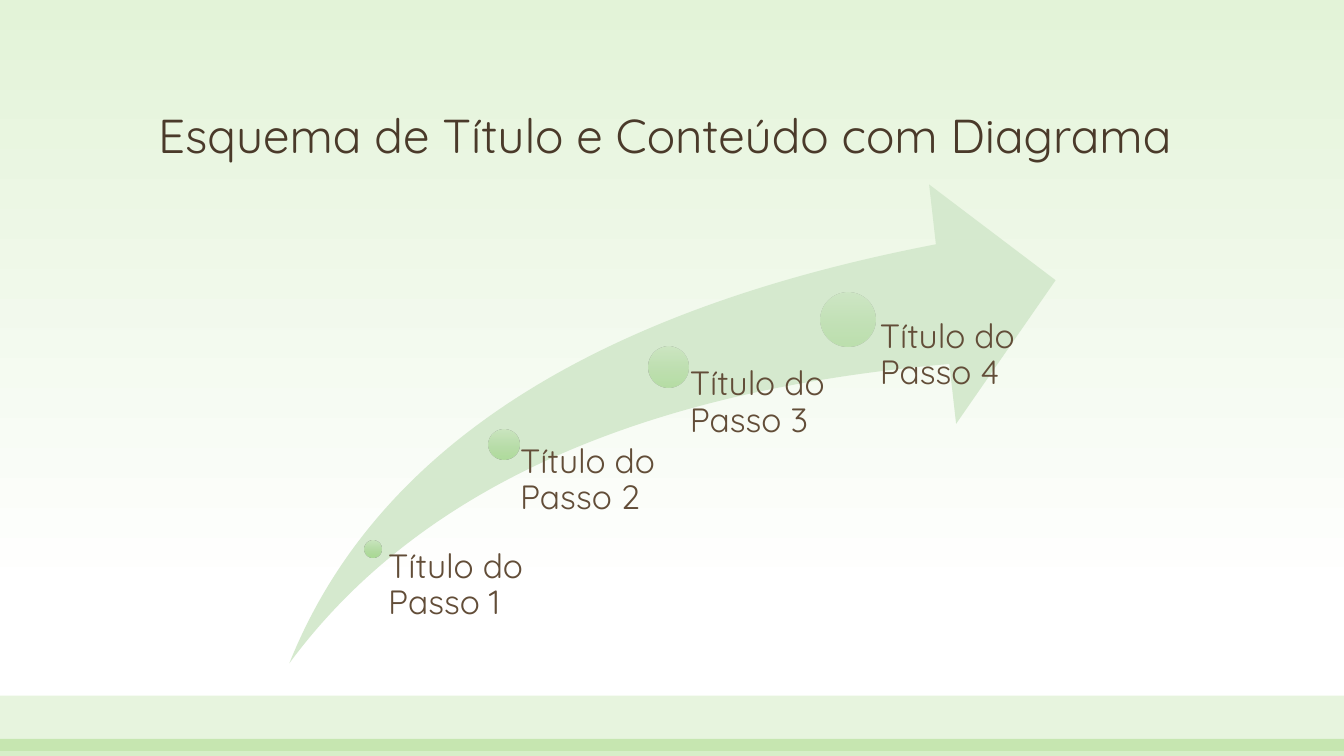
from typing import NamedTuple

from lxml.etree import SubElement
from pptx import Presentation
from pptx.dml.color import RGBColor
from pptx.enum.shapes import MSO_SHAPE as Shape
from pptx.enum.text import MSO_ANCHOR as Anchor
from pptx.oxml.ns import qn
from pptx.util import Inches, Pt

FONT = "Quicksand"
TITLE_BROWN = RGBColor(0x4A, 0x3A, 0x2A)
TEXT_BROWN = RGBColor(0x62, 0x4D, 0x38)
BAND_GREEN = RGBColor(0x72, 0xC2, 0x3C)
ARROW_GREEN = RGBColor(0xD5, 0xE9, 0xCE)
SKY_GREEN = RGBColor(0xE3, 0xF3, 0xD8)
WHITE = RGBColor(0xFF, 0xFF, 0xFF)
DOT_LIGHT = RGBColor(0xC8, 0xE5, 0xBC)
DOT_MID = RGBColor(0xB3, 0xDB, 0xA2)
DOT_DARK = RGBColor(0xA4, 0xD7, 0x8D)

ARROW_BOTTOM = 6.58


class Band(NamedTuple):
    top: float
    height: float
    opacity: float


class Step(NamedTuple):
    cx: float
    cy: float
    diameter: float
    text_left: float
    text_width: float


BANDS = [Band(6.9, 0.55, 17), Band(7.33, 0.17, 28)]
STEPS = [
    Step(3.7, 5.45, 0.17, 3.76, 1.46),
    Step(5.0, 4.41, 0.3, 5.0, 1.6),
    Step(6.63, 3.64, 0.4, 6.63, 1.6),
    Step(8.41, 3.17, 0.54, 8.44, 1.81),
]


def set_opacity(color, percent: float) -> None:
    SubElement(color, qn("a:alpha"), val=str(round(percent * 1000)))


def set_gradient(fill, element, stops: list, opacity: float = 100) -> None:
    """Fill from top to bottom with (percent, colour) stops."""
    fill.gradient()
    fill.gradient_angle = 270
    stop_list = next(element.iter(qn("a:gsLst")))
    for old in list(stop_list):
        stop_list.remove(old)
    for position, rgb in stops:
        stop = SubElement(stop_list, qn("a:gs"), pos=str(position * 1000))
        color = SubElement(stop, qn("a:srgbClr"), val=str(rgb))
        if opacity < 100:
            set_opacity(color, opacity)


def add_plain_shape(slide, kind: Shape, left: float, top: float,
                    width: float, height: float, rgb: RGBColor | None = None):
    sp = slide.shapes.add_shape(kind, Inches(left), Inches(top),
                                Inches(width), Inches(height))
    sp.shadow.inherit = False
    sp.line.fill.background()
    if rgb is not None:
        sp.fill.solid()
        sp.fill.fore_color.rgb = rgb
    return sp


def add_text(slide, text: str, left: float, top: float, width: float,
             height: float, *, size: float, color: RGBColor,
             anchor: Anchor = Anchor.TOP,
             insets: tuple = (0.1, 0.05, 0.1, 0.05)) -> None:
    box = slide.shapes.add_textbox(Inches(left), Inches(top),
                                   Inches(width), Inches(height))
    tf = box.text_frame
    tf.word_wrap = True
    tf.vertical_anchor = anchor
    (tf.margin_left, tf.margin_top,
     tf.margin_right, tf.margin_bottom) = map(Inches, insets)
    p = tf.paragraphs[0]
    p.line_spacing = 0.9
    r = p.add_run()
    r.text = text
    r.font.name = FONT
    r.font.size = Pt(size)
    r.font.color.rgb = color


def add_band(slide, band: Band) -> None:
    sp = add_plain_shape(slide, Shape.RECTANGLE, 0, band.top, 13.33,
                         band.height, BAND_GREEN)
    set_opacity(next(sp.element.spPr.iter(qn("a:srgbClr"))), band.opacity)


def add_step(slide, step: Step, index: int) -> None:
    d = step.diameter
    dot = add_plain_shape(slide, Shape.OVAL, step.cx - d / 2,
                          step.cy - d / 2, d, d)
    set_gradient(dot.fill, dot.element.spPr,
                 [(0, DOT_LIGHT), (50, DOT_MID), (100, DOT_DARK)],
                 opacity=90 - 40 * index / (len(STEPS) - 1))
    add_text(slide, f"Título do Passo {index + 1}", step.text_left, step.cy,
             step.text_width, ARROW_BOTTOM - step.cy, size=24,
             color=TEXT_BROWN, insets=(0.53 * d, 0, 0, 0))


def main() -> None:
    prs = Presentation()
    prs.slide_width, prs.slide_height = Inches(13.33), Inches(7.5)
    slide = prs.slides.add_slide(prs.slide_layouts[6])

    # Background and bottom bands
    set_gradient(slide.background.fill, slide.element,
                 [(0, SKY_GREEN), (79, WHITE)])
    for band in BANDS:
        add_band(slide, band)

    # Title
    add_text(slide, "Esquema de Título e Conteúdo com Diagrama",
             1.47, 0.48, 10.4, 1.19, size=34, color=TITLE_BROWN,
             anchor=Anchor.BOTTOM)

    # Rising arrow with its steps
    arrow = add_plain_shape(slide, Shape.SWOOSH_ARROW, 2.87, 1.83, 7.6,
                            ARROW_BOTTOM - 1.83, ARROW_GREEN)
    arrow.adjustments[0] = arrow.adjustments[1] = 0.25
    for index, step in enumerate(STEPS):
        add_step(slide, step, index)

    prs.save("out.pptx")


if __name__ == "__main__":
    main()
